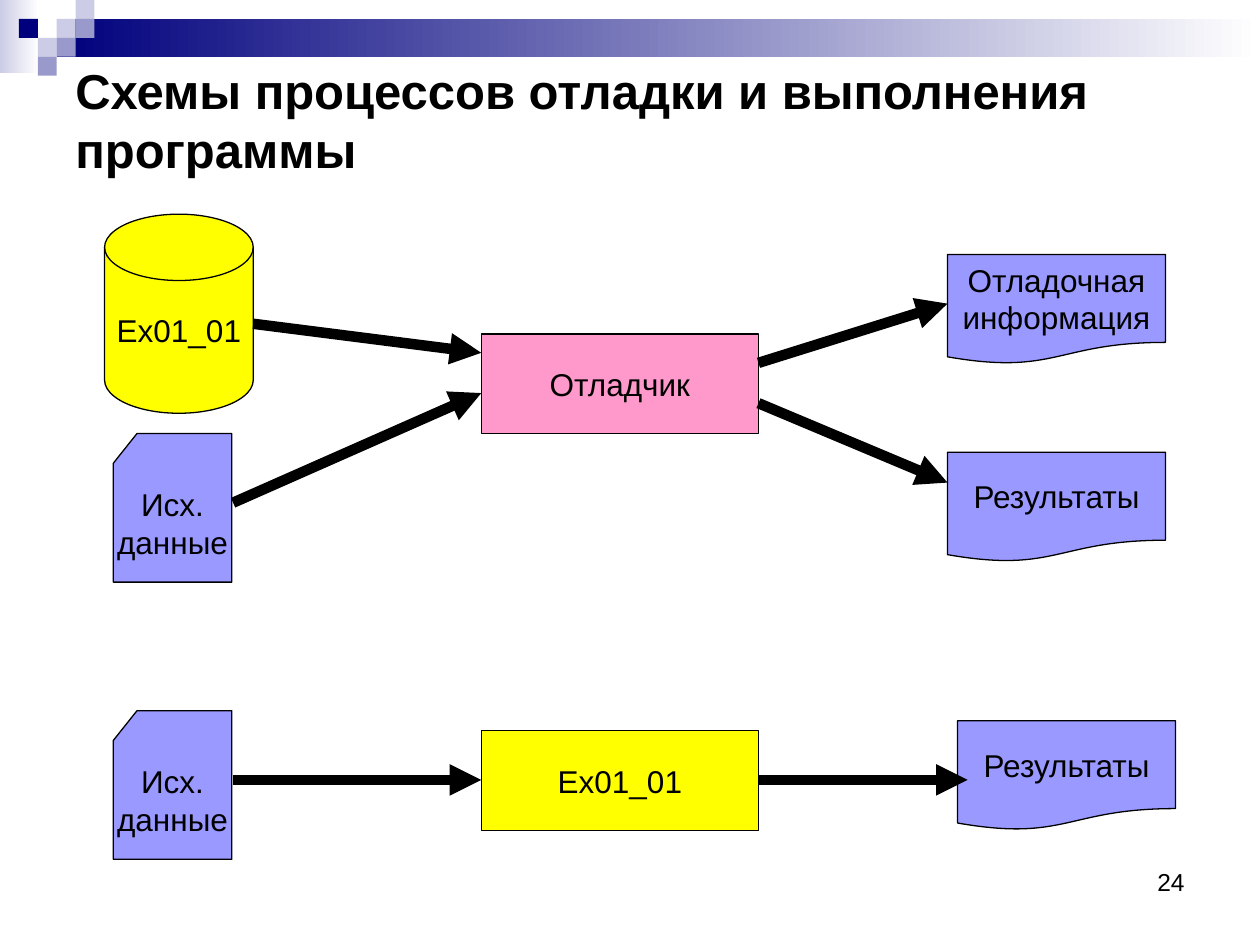
from dataclasses import dataclass

import pptx
import pptx.dml.color
import pptx.enum.shapes
import pptx.enum.text
import pptx.oxml.ns
import pptx.util
from lxml import etree

Inches = pptx.util.Inches
RGBColor = pptx.dml.color.RGBColor
MSO_SHAPE = pptx.enum.shapes.MSO_SHAPE
PP_ALIGN = pptx.enum.text.PP_ALIGN
MSO_ANCHOR = pptx.enum.text.MSO_ANCHOR

BLACK = RGBColor(0x00, 0x00, 0x00)
WHITE = RGBColor(0xFF, 0xFF, 0xFF)
NAVY = RGBColor(0x00, 0x00, 0x7D)
PALE = RGBColor(0xCC, 0xCC, 0xE6)
MID = RGBColor(0x99, 0x99, 0xCC)
YELLOW = RGBColor(0xFF, 0xFF, 0x00)
PINK = RGBColor(0xFF, 0x99, 0xCC)
LILAC = RGBColor(0x99, 0x99, 0xFF)
FONT = "Arial"


@dataclass
class Kind:
    preset: MSO_SHAPE
    width: float
    height: float


@dataclass
class Node:
    kind: Kind
    left: float
    top: float
    color: RGBColor
    lines: tuple[str, ...]


@dataclass
class Arrow:
    x1: float
    y1: float
    x2: float
    y2: float


DISK = Kind(MSO_SHAPE.FLOWCHART_MAGNETIC_DISK, 1.18, 1.58)
CARD = Kind(MSO_SHAPE.FLOWCHART_CARD, 0.94, 1.18)
PROCESS = Kind(MSO_SHAPE.FLOWCHART_PROCESS, 2.2, 0.79)
DOCUMENT = Kind(MSO_SHAPE.FLOWCHART_DOCUMENT, 1.73, 0.87)

INPUT = ("Исх.", "данные")
RESULTS = ("Результаты",)
PROGRAM = ("Ex01_01",)

NODES = [
    # Debugging
    Node(DISK, 0.83, 1.7, YELLOW, PROGRAM),
    Node(CARD, 0.9, 3.44, LILAC, INPUT),
    Node(PROCESS, 3.82, 2.65, PINK, ("Отладчик",)),
    Node(DOCUMENT, 7.52, 2.02, LILAC, ("Отладочная", "информация")),
    Node(DOCUMENT, 7.52, 3.59, LILAC, RESULTS),
    # Execution
    Node(PROCESS, 3.82, 5.8, YELLOW, PROGRAM),
    Node(CARD, 0.9, 5.64, LILAC, INPUT),
    Node(DOCUMENT, 7.6, 5.72, LILAC, RESULTS),
]

ARROWS = [
    Arrow(2.01, 2.57, 3.82, 2.8),
    Arrow(1.85, 3.99, 3.82, 3.12),
    Arrow(6.02, 2.88, 7.52, 2.41),
    Arrow(6.02, 3.2, 7.52, 3.83),
    Arrow(6.02, 6.19, 7.68, 6.19),
    Arrow(1.85, 6.19, 3.82, 6.19),
]

# Column and row of each corner square, on a 0.15 inch grid
TILE = 0.15
TILES = [(3, 1, PALE), (4, 0, PALE), (4, 1, MID), (2, 2, PALE),
         (1, 1, NAVY), (3, 2, MID), (2, 3, MID)]


def add_run(p, text: str, size: int, bold: bool = False) -> None:
    r = p.add_run()
    r.text = text
    r.font.name = FONT
    r.font.size = pptx.util.Pt(size)
    r.font.bold = bold
    r.font.color.rgb = BLACK


def add_block(s, preset: MSO_SHAPE, left: float, top: float,
              width: float, height: float):
    sp = s.shapes.add_shape(preset, Inches(left), Inches(top),
                            Inches(width), Inches(height))
    sp.shadow.inherit = False
    sp.line.fill.background()
    return sp


def add_fade(s, left: float, top: float, width: float, height: float,
             start: RGBColor) -> None:
    sp = add_block(s, MSO_SHAPE.RECTANGLE, left, top, width, height)
    sp.fill.gradient()
    sp.fill.gradient_angle = 0
    for stop, color in zip(sp.fill.gradient_stops, (start, WHITE)):
        stop.color.rgb = color


def add_node(s, node: Node) -> None:
    sp = add_block(s, node.kind.preset, node.left, node.top,
                   node.kind.width, node.kind.height)
    sp.fill.solid()
    sp.fill.fore_color.rgb = node.color
    sp.line.color.rgb = BLACK
    sp.line.width = pptx.util.Pt(0.75)
    tf = sp.text_frame
    tf.word_wrap = False
    tf.vertical_anchor = MSO_ANCHOR.MIDDLE
    for i, line in enumerate(node.lines):
        p = tf.add_paragraph() if i else tf.paragraphs[0]
        p.alignment = PP_ALIGN.CENTER
        add_run(p, line, 18)


def add_arrow(s, a: Arrow) -> None:
    c = s.shapes.add_connector(pptx.enum.shapes.MSO_CONNECTOR.STRAIGHT,
                               Inches(a.x1), Inches(a.y1),
                               Inches(a.x2), Inches(a.y2))
    c.line.color.rgb = BLACK
    c.line.width = pptx.util.Pt(6)
    qn = pptx.oxml.ns.qn
    etree.SubElement(c.line._get_or_add_ln(), qn("a:tailEnd"), type="triangle")
    etree.SubElement(c._element.spPr, qn("a:effectLst"))


def add_text_box(s, left: float, top: float, width: float, height: float):
    tf = s.shapes.add_textbox(Inches(left), Inches(top),
                              Inches(width), Inches(height)).text_frame
    tf.word_wrap = True
    return tf


def main() -> None:
    prs = pptx.Presentation()
    prs.slide_width = Inches(10)
    prs.slide_height = Inches(7.5)
    s = prs.slides.add_slide(prs.slide_layouts[6])

    # Header band and corner squares
    add_fade(s, 0, 0, 0.31, 0.58, PALE)
    add_fade(s, 0.45, 0.15, 9.55, 0.3, NAVY)
    for col, row, color in TILES:
        sp = add_block(s, MSO_SHAPE.RECTANGLE, col * TILE, row * TILE, TILE, TILE)
        sp.fill.solid()
        sp.fill.fore_color.rgb = color

    # Slide number
    p = add_text_box(s, 7.17, 6.83, 2.33, 0.52).paragraphs[0]
    p.alignment = PP_ALIGN.RIGHT
    add_run(p, "24", 14)

    # Title
    tf = add_text_box(s, 0.5, 0.5, 9, 0.89)
    tf.vertical_anchor = MSO_ANCHOR.MIDDLE
    p = tf.paragraphs[0]
    add_run(p, "Схемы процессов отладки и выполнения", 28, bold=True)
    p.add_line_break()
    add_run(p, "программы", 28, bold=True)

    # Diagram
    for node in NODES:
        add_node(s, node)
    for arrow in ARROWS:
        add_arrow(s, arrow)

    prs.save("out.pptx")


if __name__ == "__main__":
    main()
